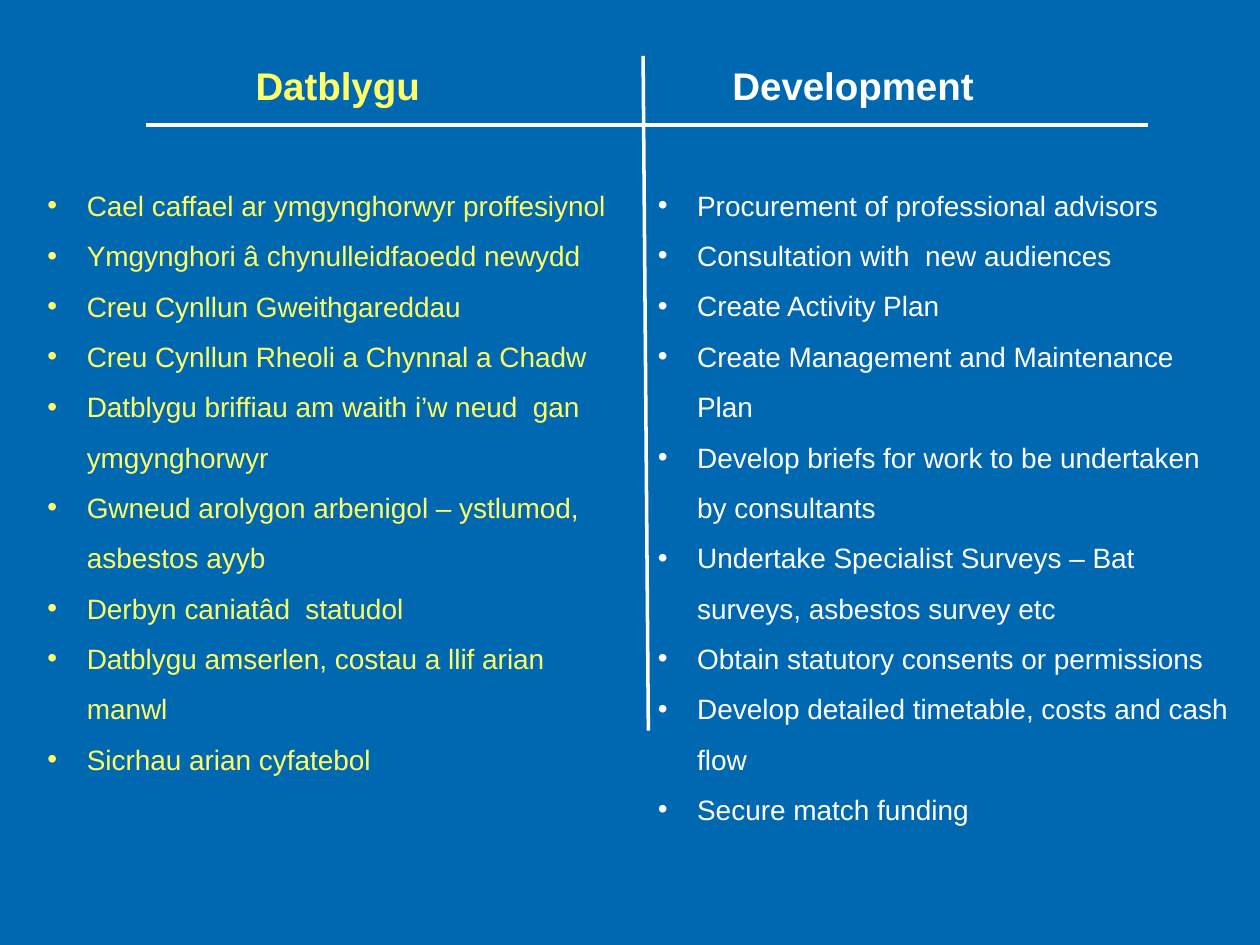
import pptx
import pptx.dml.color
import pptx.enum.shapes
import pptx.enum.text
import pptx.oxml.ns
import pptx.util
import lxml.etree

Pt = pptx.util.Pt
YELLOW, WHITE, BLUE = "FFFF66", "FFFFFF", "0067B1"
WELSH = [
    "Cael caffael ar ymgynghorwyr proffesiynol",
    "Ymgynghori â chynulleidfaoedd newydd",
    "Creu Cynllun Gweithgareddau",
    "Creu Cynllun Rheoli a Chynnal a Chadw",
    "Datblygu briffiau am waith i’w neud  gan ymgynghorwyr",
    "Gwneud arolygon arbenigol – ystlumod, asbestos ayyb",
    "Derbyn caniatâd  statudol",
    "Datblygu amserlen, costau a llif arian manwl",
    "Sicrhau arian cyfatebol",
]
ENGLISH = [
    "Procurement of professional advisors",
    "Consultation with  new audiences",
    "Create Activity Plan",
    "Create Management and Maintenance Plan",
    "Develop briefs for work to be undertaken by consultants",
    "Undertake Specialist Surveys – Bat surveys, asbestos survey etc",
    "Obtain statutory consents or permissions",
    "Develop detailed timetable, costs and cash flow",
    "Secure match funding",
]


def rgb(value):
    """Return the colour for a hex string."""
    return pptx.dml.color.RGBColor.from_string(value)


def add_line(slide, start, end, color=WHITE, width=2):
    """Draw a straight line without a shadow."""
    line = slide.shapes.add_connector(
        pptx.enum.shapes.MSO_CONNECTOR.STRAIGHT, *(Pt(value) for value in start + end)
    )
    line.line.color.rgb = rgb(color)
    line.line.width = Pt(width)
    properties = line._element.spPr
    lxml.etree.SubElement(properties, pptx.oxml.ns.qn("a:effectLst"))


def set_bullet(paragraph, indent):
    """Give a paragraph a round bullet and a hanging indent."""
    properties = paragraph._p.get_or_add_pPr()
    properties.set("marL", str(Pt(indent)))
    properties.set("indent", str(-Pt(indent)))
    font = lxml.etree.SubElement(properties, pptx.oxml.ns.qn("a:buFont"))
    font.set("typeface", "Arial")
    bullet = lxml.etree.SubElement(properties, pptx.oxml.ns.qn("a:buChar"))
    bullet.set("char", "•")


def add_text(slide, lines, box, *, size, color, bold=False, centered=False, bullet_indent=0, spacing=1):
    """Add a wrapped text box with one paragraph for each line."""
    shape = slide.shapes.add_textbox(*(Pt(value) for value in box))
    frame = shape.text_frame
    frame.word_wrap = True
    frame.text = "\n".join(lines)
    for paragraph in frame.paragraphs:
        paragraph.line_spacing = spacing
        if bullet_indent:
            set_bullet(paragraph, bullet_indent)
        if centered:
            paragraph.alignment = pptx.enum.text.PP_ALIGN.CENTER
        for run in paragraph.runs:
            run.font.name = "Arial"
            run.font.size = Pt(size)
            run.font.bold = bold
            run.font.color.rgb = rgb(color)


def main():
    """Build the bilingual development slide."""
    presentation = pptx.Presentation()
    presentation.slide_width, presentation.slide_height = Pt(720), Pt(540)
    slide = presentation.slides.add_slide(presentation.slide_layouts[6])
    slide.background.fill.solid()
    slide.background.fill.fore_color.rgb = rgb(BLUE)

    add_line(slide, (367.5, 32), (370.5, 417.5))
    add_line(slide, (83.5, 71.5), (656, 71.5))
    columns = [
        ("Datblygu", WELSH, YELLOW, 67, 20, 353),
        ("Development", ENGLISH, WHITE, 361.5, 368.8, 385),
    ]
    for heading, items, color, heading_left, list_left, list_height in columns:
        add_text(slide, [heading], (heading_left, 32, 252, 54),
                 size=22, color=color, bold=True, centered=True)
        add_text(slide, items, (list_left, 94.5, 345, list_height),
                 size=16, color=color, bullet_indent=22.5, spacing=1.5)

    presentation.save("out.pptx")


if __name__ == "__main__":
    main()
